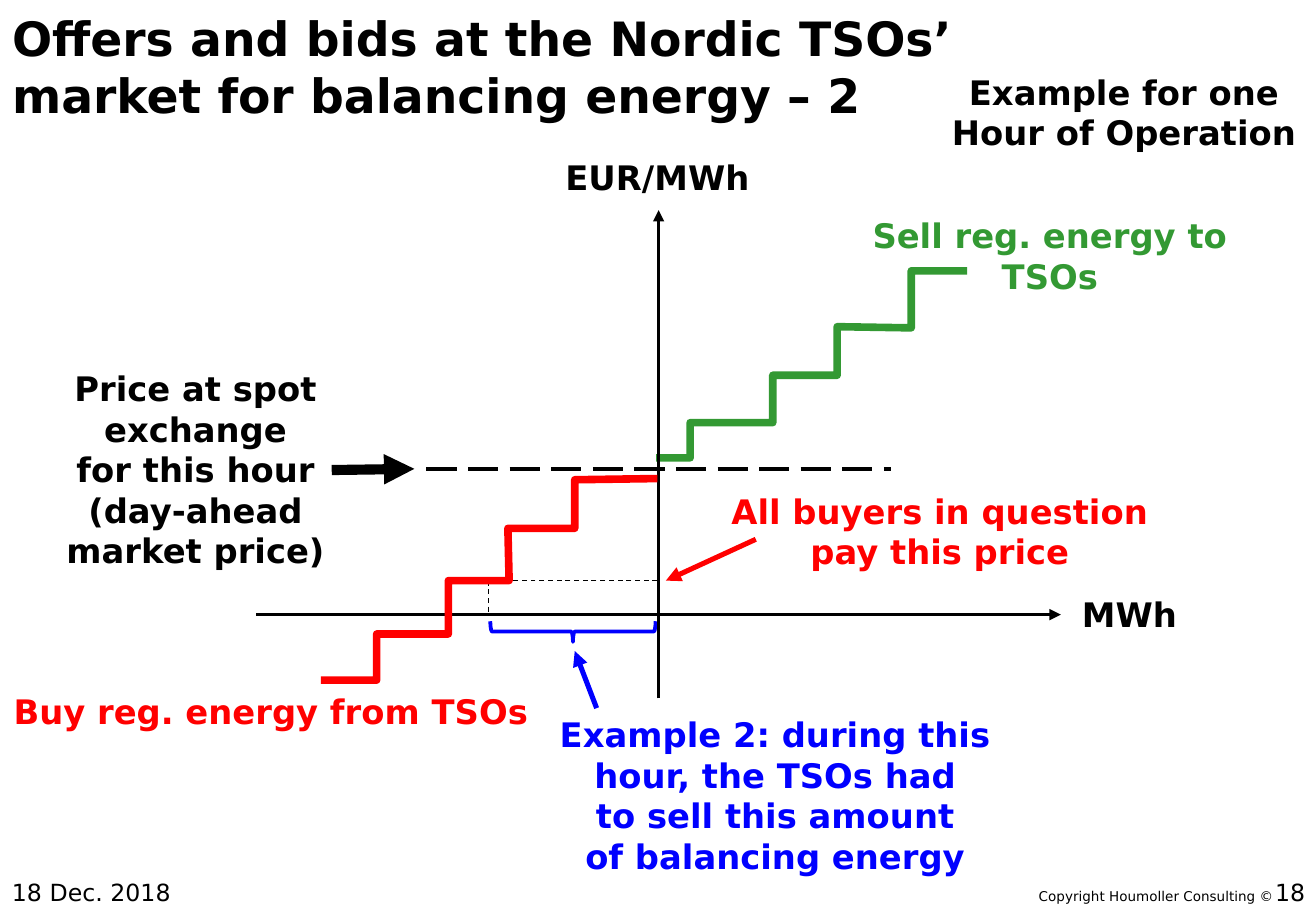
from pptx import Presentation
from pptx.dml.color import RGBColor
from pptx.enum.dml import MSO_LINE
from pptx.enum.shapes import MSO_CONNECTOR, MSO_SHAPE
from pptx.enum.text import MSO_ANCHOR, PP_ALIGN
from pptx.oxml.ns import qn
from pptx.util import Pt
from lxml.etree import SubElement

PX = 9144  # one px is a hundredth of an inch
FONT = "DejaVu Sans"
HUES = {"black": "000000", "green": "339933", "red": "FF0000", "blue": "0000FF"}
LEFT, MID, RIGHT = PP_ALIGN.LEFT, PP_ALIGN.CENTER, PP_ALIGN.RIGHT


def hue(name):
    return RGBColor.from_string(HUES[name])


def write(frame, text, size=20, color="black", bold=True, align=MID,
          anchor=MSO_ANCHOR.TOP, wrap=False):
    frame.word_wrap = wrap
    frame.vertical_anchor = anchor
    frame.text = text
    for para in frame.paragraphs:
        para.alignment = align
        font = para.font
        font.name, font.size, font.bold = FONT, Pt(size), bold
        font.color.rgb = hue(color)


class Board:
    def __init__(self, deck):
        self.slide = deck.slides.add_slide(deck.slide_layouts[5])
        self.shapes = self.slide.shapes

    def title(self, box, text, **style):
        head = self.shapes.title
        head.left, head.top, head.width, head.height = [n * PX for n in box]
        write(head.text_frame, text, **style)

    def label(self, box, text, **style):
        area = self.shapes.add_textbox(*[n * PX for n in box])
        write(area.text_frame, text, **style)

    def pen(self, shape, color, width):
        shape.line.color.rgb = hue(color)
        shape.line.width = Pt(width)

    def line(self, start, end, color="black", width=2.25, dash=None, arrow=False):
        ends = [n * PX for n in start + end]
        link = self.shapes.add_connector(MSO_CONNECTOR.STRAIGHT, *ends)
        self.pen(link, color, width)
        if dash:
            link.line.dash_style = dash
        if arrow:
            SubElement(link.line._get_or_add_ln(), qn("a:tailEnd"), type="triangle")
        SubElement(link._element.spPr, qn("a:effectLst"))

    def curve(self, points, color):
        path = self.shapes.build_freeform(*points[0], scale=PX)
        path.add_line_segments(points[1:], close=False)
        self.bare(path.convert_to_shape(), color, 4.5)

    def brace(self, box, color):
        shape = self.shapes.add_shape(MSO_SHAPE.RIGHT_BRACE, *[n * PX for n in box])
        shape.rotation = 90
        self.bare(shape, color, 2.25)

    def bare(self, shape, color, width):
        shape.shadow.inherit = False
        shape.fill.background()
        self.pen(shape, color, width)


def main():
    deck = Presentation()
    deck.slide_width, deck.slide_height = 1083 * PX, 750 * PX
    board = Board(deck)

    # Title and footer
    board.title((0, -8, 921, 125),
                "Offers and bids at the Nordic TSOs’\vmarket for balancing energy – 2",
                size=28, align=LEFT, anchor=MSO_ANCHOR.MIDDLE, wrap=True)
    board.label((845, 726, 216, 24), "Copyright Houmoller Consulting ©",
                size=8, bold=False, align=LEFT)
    for left, text, align in ((858, "18", RIGHT), (0, "18 Dec. 2018", LEFT)):
        board.label((left, 709, 226, 50), text, size=14, bold=False, align=align,
                    anchor=MSO_ANCHOR.MIDDLE, wrap=True)
    board.label((773, 54, 304, 77), "Example for one\nHour of Operation")

    # Offers to sell
    board.curve([(540, 377), (568, 377), (568, 348), (636, 348), (636, 309),
                 (689, 309), (689, 269), (750, 270), (750, 223), (796, 223)], "green")
    board.label((664, 172, 400, 44), "Sell reg. energy to TSOs",
                color="green", wrap=True)

    # Spot price
    board.label((43, 298, 236, 178), "Price at spot\nexchange\nfor this hour\n"
                "(day-ahead\nmarket price)")
    board.line((273, 387), (341, 386), width=6, arrow=True)
    board.line((351, 386), (733, 386), dash=MSO_LINE.LONG_DASH)

    # Price paid by buyers
    board.line((541, 478), (403, 478), width=0.75, dash=MSO_LINE.DASH)
    board.line((402, 478), (402, 505), width=0.75, dash=MSO_LINE.DASH)
    board.label((592, 399, 363, 77), "All buyers in question\npay this price",
                color="red")
    board.line((622, 444), (548, 478), color="red", width=3, arrow=True)

    # Amount sold
    board.label((450, 583, 376, 145), "Example 2: during this\nhour, the TSOs had\n"
                "to sell this amount\nof balancing energy", color="blue")
    board.line((491, 583), (473, 536), color="blue", width=3, arrow=True)
    board.brace((463, 452, 17, 136), "blue")

    # Axes
    board.line((211, 506), (873, 506), arrow=True)
    board.label((880, 484, 99, 44), "MWh")
    board.label((450, 124, 182, 44), "EUR/MWh")
    board.line((542, 575), (542, 173), arrow=True)

    # Bids to buy
    board.label((1, 564, 444, 44), "Buy reg. energy from TSOs", color="red")
    board.curve([(541, 394), (473, 395), (473, 435), (418, 435), (419, 478),
                 (369, 478), (369, 522), (310, 522), (310, 560), (264, 560)], "red")

    deck.save("out.pptx")


if __name__ == "__main__":
    main()
